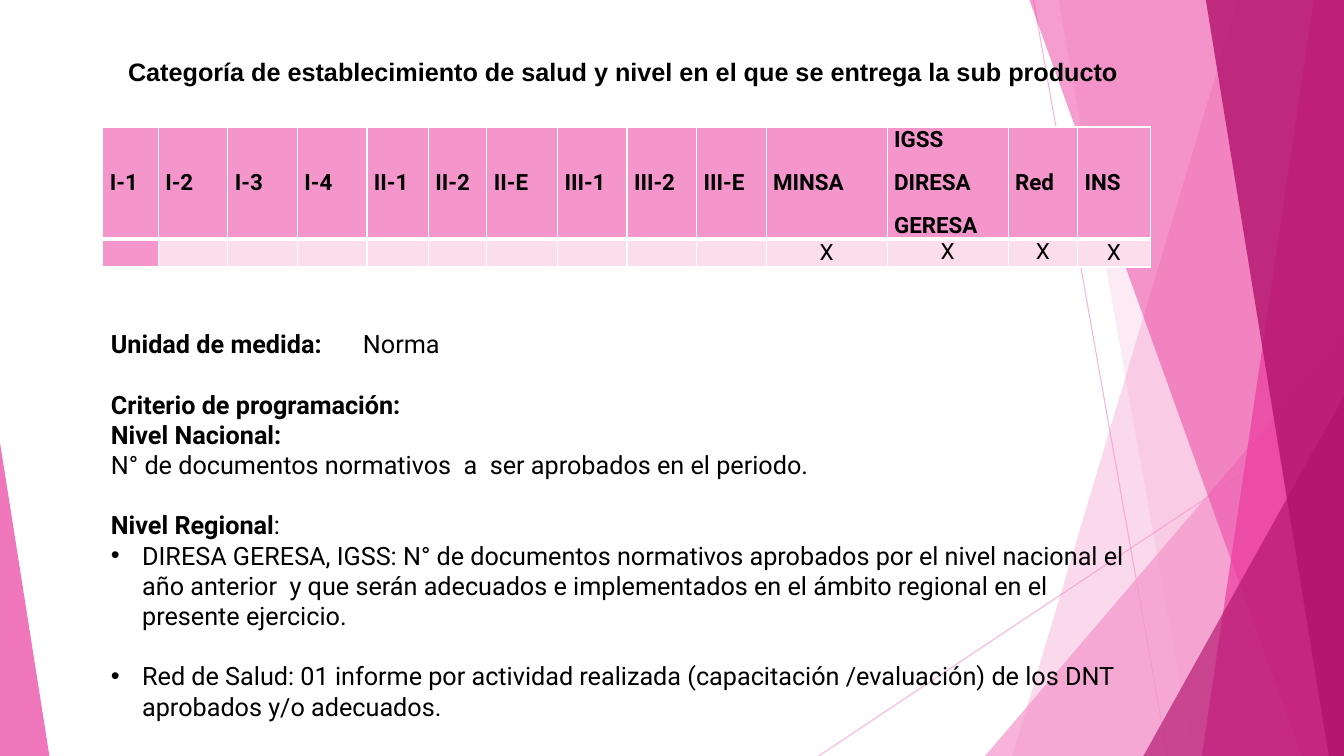
from dataclasses import dataclass

from lxml import etree
from pptx import Presentation
from pptx import util as u
from pptx.dml import color
from pptx.enum import shapes, text
from pptx.oxml import ns

WIDE, HIGH = 13.33, 7.5


@dataclass(frozen=True)
class Theme:
    white: str = "FFFFFF"
    ink: str = "000000"
    light: str = "F496CB"
    pink: str = "EB3D9F"
    deep: str = "B2136D"
    pale: str = "FBDDEC"
    sans: str = "Roboto"
    head: str = "Arial"
    main: int = 18
    cell: int = 16


LOOK = Theme()

# Table content: label and column width
COLS = [("I-1", 0.55), ("I-2", 0.69), ("I-3", 0.69), ("I-4", 0.69),
        ("II-1", 0.61), ("II-2", 0.58), ("II-E", 0.7), ("III-1", 0.69),
        ("III-2", 0.69), ("III-E", 0.69), ("MINSA", 1.2),
        ("IGSS\nDIRESA\nGERESA", 1.2), ("Red", 0.69), ("INS", 0.72)]
ROWS = [1.1, 0.28]
MARKED = 10  # first column that carries an X
RAISED = (11, 12)  # marks set at the top of the cell

# Body content: bold part, plain part, bullet, gap before
GAP = 21.5
BODY = [
    ("Unidad de medida:", "\tNorma", False, 0),
    ("Criterio de programación:", "", False, GAP),
    ("Nivel Nacional:", "", False, 0),
    ("", "N° de documentos normativos  a  ser aprobados en el periodo.", False, 0),
    ("Nivel Regional", ":", False, GAP),
    ("", "DIRESA GERESA, IGSS: N° de documentos normativos aprobados por el "
     "nivel nacional el año anterior  y que serán adecuados e implementados "
     "en el ámbito regional en el presente ejercicio.", True, 0),
    ("", "Red de Salud: 01 informe por actividad realizada (capacitación "
     "/evaluación) de los DNT aprobados y/o adecuados.", True, GAP),
]


def tint(tone):
    return color.RGBColor.from_string(tone)


def add(node, tag, **attrs):
    return etree.SubElement(node, ns.qn(tag), **attrs)


def fade(shape, alpha):
    for node in shape._element.spPr.iter(ns.qn("a:srgbClr")):
        add(node, "a:alpha", val=str(alpha * 1000))


def paint(shape, tone, alpha):
    shape.shadow.inherit = False
    shape.fill.solid()
    shape.fill.fore_color.rgb = tint(tone)
    shape.line.fill.background()
    fade(shape, alpha)


def style(run, font, size, bold):
    run.font.name, run.font.size, run.font.bold = font, u.Pt(size), bold
    run.font.color.rgb = tint(LOOK.ink)


# Background pieces
def ray(slide, *ends):
    line = slide.shapes.add_connector(
        shapes.MSO_CONNECTOR.STRAIGHT, *map(u.Inches, ends))
    line.line.color.rgb = tint(LOOK.light)
    line.line.width = u.Pt(0.75)
    fade(line, 70)
    add(line._element.spPr, "a:effectLst")


def band(slide, top, base, tone, alpha):
    """Panel from a slanted left edge to the right side of the slide."""
    form = slide.shapes.build_freeform(u.Inches(top), 0)
    points = [(WIDE, 0), (WIDE, HIGH), (base, HIGH)]
    form.add_line_segments([(u.Inches(x), u.Inches(y)) for x, y in points])
    paint(form.convert_to_shape(), tone, alpha)


def wedge(slide, left, top, width, peak, tone, alpha):
    """Right triangle that stands on the bottom of the slide."""
    shape = slide.shapes.add_shape(
        shapes.MSO_SHAPE.ISOSCELES_TRIANGLE, u.Inches(left), u.Inches(top),
        u.Inches(width), u.Inches(HIGH - top))
    shape.adjustments[0] = peak
    paint(shape, tone, alpha)


def backdrop(slide):
    ray(slide, 10.25, 0, 11.58, HIGH)
    ray(slide, WIDE, 4.03, 8.12, HIGH)
    band(slide, 12.28, 10.04, LOOK.light, 36)
    band(slide, 10.5, 11.83, LOOK.light, 20)
    wedge(slide, 9.77, 3.33, 3.56, 1, LOOK.light, 72)
    band(slide, 10.21, 12.91, LOOK.pink, 50)
    band(slide, 13.03, 11.92, LOOK.pink, 70)
    band(slide, 11.96, 13.18, LOOK.deep, 80)
    wedge(slide, 11.34, 3.93, 1.99, 1, LOOK.deep, 66)
    wedge(slide, 0, 4.39, 0.49, 0, LOOK.pink, 70)


# Table
def edge(cell, row):
    """White cell borders, thicker between the two rows."""
    sides = {"L": 1, "R": 1, "T": 3 if row else 1, "B": 1 if row else 3}
    for side, width in sides.items():
        line = add(cell._tc.get_or_add_tcPr(), "a:ln" + side, w=str(u.Pt(width)))
        add(add(line, "a:solidFill"), "a:srgbClr", val=LOOK.white)


def write(cell, words, row, col):
    edge(cell, row)
    cell.fill.solid()
    cell.fill.fore_color.rgb = tint(LOOK.pale if row and col else LOOK.light)
    cell.margin_left = cell.margin_right = u.Inches(0.07)
    cell.margin_top = cell.margin_bottom = 0
    high = row and col in RAISED
    cell.vertical_anchor = text.MSO_ANCHOR.TOP if high else text.MSO_ANCHOR.MIDDLE
    cell.text_frame.text = words
    for i, para in enumerate(cell.text_frame.paragraphs):
        para.alignment = text.PP_ALIGN.CENTER if row else text.PP_ALIGN.JUSTIFY
        para.space_before = u.Pt(12 if i else 0)
        for run in para.runs:
            style(run, LOOK.sans, LOOK.cell, not row)
        if not words:
            add(para._p, "a:endParaRPr", sz=str(LOOK.cell * 100))


def grid(slide):
    wide = sum(width for _, width in COLS)
    table = slide.shapes.add_table(
        len(ROWS), len(COLS), u.Inches(1.02), u.Inches(1.26),
        u.Inches(wide), u.Inches(sum(ROWS))).table
    for row, height in enumerate(ROWS):
        table.rows[row].height = u.Inches(height)
    for col, (label, width) in enumerate(COLS):
        table.columns[col].width = u.Inches(width)
        write(table.cell(0, col), label, 0, col)
        write(table.cell(1, col), "X" if col >= MARKED else "", 1, col)


# Title and body
def place(slide, holder, *box):
    """Move a placeholder to its box, in front of the other shapes."""
    holder.left, holder.top, holder.width, holder.height = map(u.Inches, box)
    slide.shapes._spTree.append(holder._element)
    frame = holder.text_frame
    frame.word_wrap = True
    frame.auto_size = text.MSO_AUTO_SIZE.NONE
    frame.vertical_anchor = text.MSO_ANCHOR.TOP
    return frame


def title(slide):
    frame = place(slide, slide.shapes.title, 1.17, 0.51, 10.8, 0.4)
    frame.text = ("Categoría de establecimiento de salud y nivel "
                  "en el que se entrega la sub producto")
    para = frame.paragraphs[0]
    para.alignment = text.PP_ALIGN.LEFT
    style(para.runs[0], LOOK.head, LOOK.main, True)


def body(slide):
    frame = place(slide, slide.placeholders[1], 1, 3.21, 10.44, 4.04)
    for i, (bold, plain, dot, gap) in enumerate(BODY):
        para = frame.add_paragraph() if i else frame.paragraphs[0]
        props = para._p.get_or_add_pPr()
        hang = u.Inches(0.31) if dot else 0
        props.set("marL", str(hang))
        props.set("indent", str(-hang))
        if dot:
            add(props, "a:buFont", typeface=LOOK.head)
            add(props, "a:buChar", char="•")
        else:
            add(props, "a:buNone")
        if "\t" in plain:
            add(add(props, "a:tabLst"), "a:tab", pos=str(u.Inches(2.34)), algn="l")
        para.space_before = u.Pt(gap)
        para.alignment = text.PP_ALIGN.LEFT
        for words, heavy in ((bold, True), (plain, False)):
            if words:
                run = para.add_run()
                run.text = words
                style(run, LOOK.sans, LOOK.main, heavy)


def main():
    deck = Presentation()
    deck.slide_width, deck.slide_height = u.Inches(WIDE), u.Inches(HIGH)
    slide = deck.slides.add_slide(deck.slide_layouts[1])
    backdrop(slide)
    grid(slide)
    title(slide)
    body(slide)
    deck.save("out.pptx")


if __name__ == "__main__":
    main()
